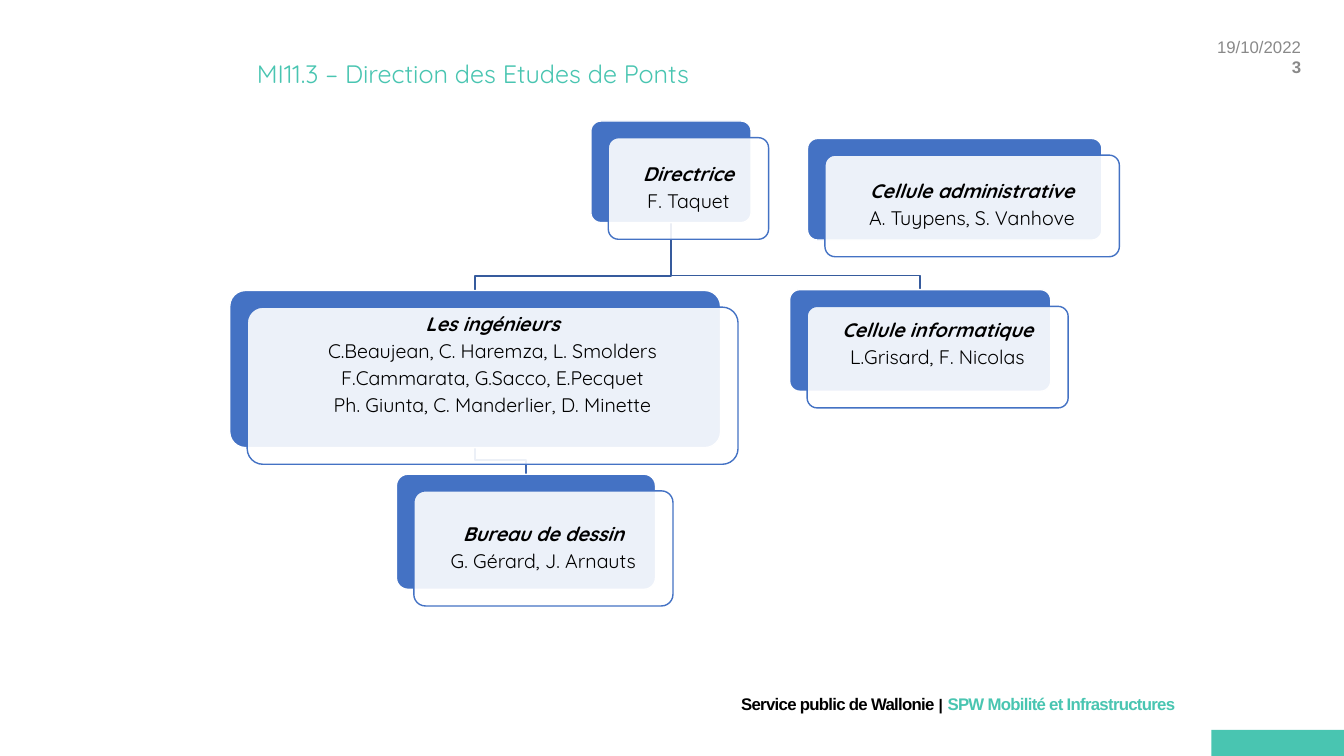
from pptx import Presentation
from pptx.dml.color import RGBColor
from pptx.enum.shapes import MSO_SHAPE
from pptx.enum.text import MSO_ANCHOR, MSO_AUTO_SIZE, PP_ALIGN
from pptx.oxml.ns import qn
from pptx.util import Cm, Pt
from lxml import etree

RECT, ROUND = MSO_SHAPE.RECTANGLE, MSO_SHAPE.ROUNDED_RECTANGLE
LEFT, MID, RIGHT = PP_ALIGN.LEFT, PP_ALIGN.CENTER, PP_ALIGN.RIGHT
TOP, CENTRE = MSO_ANCHOR.TOP, MSO_ANCHOR.MIDDLE
NO_FIT = MSO_AUTO_SIZE.NONE


class Theme:
    sans, head = "Arial", "Quicksand"
    teal, blue, white = "49C5B1", "4472C4", "FFFFFF"
    black, grey = "000000", "898989"
    title, card, small, tiny = 18, 14, 12, 11


# Content: lengths in cm
W, H = 33.87, 19.05
TITLE = "MI11.3 – Direction des Etudes de Ponts"
DATE, PAGE = "19/10/2022", "3"
FOOT = [
    ("Service public de Wallonie ", Theme.small, Theme.black),
    ("|", Theme.tiny, Theme.black),
    (" ", Theme.small, Theme.black),
    ("SPW Mobilité et Infrastructures", Theme.small, Theme.teal),
]
# key: (left, top, width, height), room kept below the text, heading, names
UNITS = {
    "head": ((14.89, 3.05, 4.04, 2.56), 0, "Directrice", ["F. Taquet"]),
    "staff": ((5.79, 7.32, 12.37, 3.96), 1, "Les ingénieurs", [
        "C.Beaujean, C. Haremza, L. Smolders",
        "F.Cammarata, G.Sacco, E.Pecquet",
        "Ph. Giunta, C. Manderlier, D. Minette"]),
    "draw": ((9.99, 11.95, 6.53, 2.9), 0, "Bureau de dessin",
             ["G. Gérard, J. Arnauts"]),
    "tech": ((19.9, 7.3, 6.58, 2.56), 0.61, "Cellule informatique",
             ["L.Grisard, F. Nicolas"]),
    "admin": ((20.35, 3.49, 7.42, 2.56), 0, "Cellule administrative",
              ["A. Tuypens, S. Vanhove"]),
}
LINKS = [("head", "tech", "365B9D"), ("staff", "draw", "3E67B2"),
         ("head", "staff", "365B9D")]
SHIFT_X, SHIFT_Y = 0.44, 0.42  # front card against back card
BEND = 0.36                    # elbow height above the child
PAD = 0.23


def rgb(code):
    return RGBColor.from_string(code)


def add_run(para, text, face, size, color, bold=False, slant=False):
    run = para.add_run()
    run.text = text
    font = run.font
    font.name, font.size, font.bold, font.italic = face, Pt(size), bold, slant
    font.color.rgb = rgb(color)
    return run


def set_frame(frame, anchor):
    frame.word_wrap = True
    frame.auto_size = NO_FIT
    frame.vertical_anchor = anchor
    return frame


def add_box(x, y, w, h, anchor):
    box = slide.shapes.add_textbox(Cm(x), Cm(y), Cm(w), Cm(h))
    return set_frame(box.text_frame, anchor)


def add_block(kind, x, y, w, h, fill, line=None):
    block = slide.shapes.add_shape(kind, Cm(x), Cm(y), Cm(w), Cm(h))
    block.shadow.inherit = False
    block.fill.solid()
    block.fill.fore_color.rgb = rgb(fill)
    if line:
        block.adjustments[0] = 0.1
        block.line.color.rgb = rgb(line)
        block.line.width = Pt(1)
    else:
        block.line.fill.background()
    return block


def add_link(start, end, color):
    (px, py, pw, ph), (cx, cy, cw, _) = UNITS[start][0], UNITS[end][0]
    x1, x2, bend = px + pw / 2, cx + cw / 2, cy - BEND
    pen = slide.shapes.build_freeform(Cm(x1), Cm(py + ph))
    spots = [(x1, bend), (x2, bend), (x2, cy)]
    pen.add_line_segments([(Cm(x), Cm(y)) for x, y in spots], close=False)
    link = pen.convert_to_shape()
    link.shadow.inherit = False
    link.fill.background()
    link.line.color.rgb = rgb(color)
    link.line.width = Pt(1)


def add_unit(place, room, label, names):
    x, y, w, h = place
    add_block(ROUND, x, y, w, h, Theme.blue, Theme.white)
    card = add_block(ROUND, x + SHIFT_X, y + SHIFT_Y, w, h,
                     Theme.white, Theme.blue)
    tint = card.fill._xPr.find(qn("a:solidFill"))[0]
    etree.SubElement(tint, qn("a:alpha")).set("val", "90000")

    frame = set_frame(card.text_frame, CENTRE)
    frame.margin_left = frame.margin_right = frame.margin_top = Cm(PAD)
    frame.margin_bottom = Cm(PAD + room)
    for i, text in enumerate([label] + names):
        para = frame.add_paragraph() if i else frame.paragraphs[0]
        para.alignment = MID
        para.line_spacing = 0.9
        para.space_after = Pt(4.25)
        add_run(para, text, Theme.head, Theme.card, Theme.black,
                bold=i == 0, slant=i == 0)


deck = Presentation()
deck.slide_width, deck.slide_height = Cm(W), Cm(H)
slide = deck.slides.add_slide(deck.slide_layouts[5])

# Title
title = slide.shapes.title
title.left, title.top, title.width, title.height = (
    Cm(6.22), Cm(1.5), Cm(22), Cm(0.81))
para = set_frame(title.text_frame, CENTRE).paragraphs[0]
para.alignment = LEFT
para.line_spacing = 0.9
add_run(para, TITLE, Theme.head, Theme.title, Theme.teal)

# Date and page number
frame = add_box(26.39, 0.79, 6.65, 2, TOP)
for para, text in ((frame.paragraphs[0], DATE), (frame.add_paragraph(), PAGE)):
    para.alignment = RIGHT
    add_run(para, text, Theme.sans, Theme.small, Theme.grey, text == PAGE)

# Footer and corner bar
add_block(RECT, 30.53, 18.39, W - 30.53, H - 18.39, Theme.teal)
para = add_box(0, 17.35, 29.87, 0.76, CENTRE).paragraphs[0]
para.alignment = RIGHT
for text, size, color in FOOT:
    run = add_run(para, text, Theme.sans, size, color, bold=True)
    run.font._element.set("spc", "-50")

# Chart of units, links behind cards
for link in LINKS:
    add_link(*link)
for unit in UNITS.values():
    add_unit(*unit)

deck.save("out.pptx")
